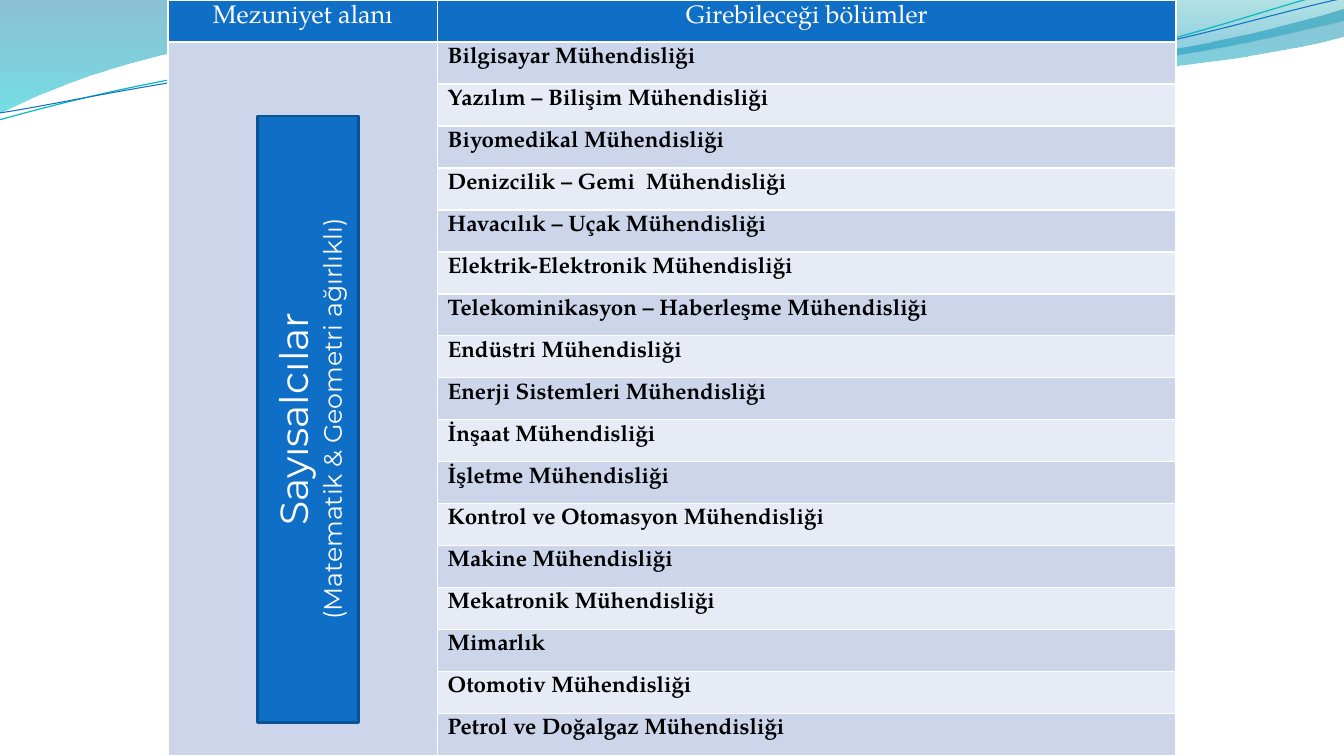
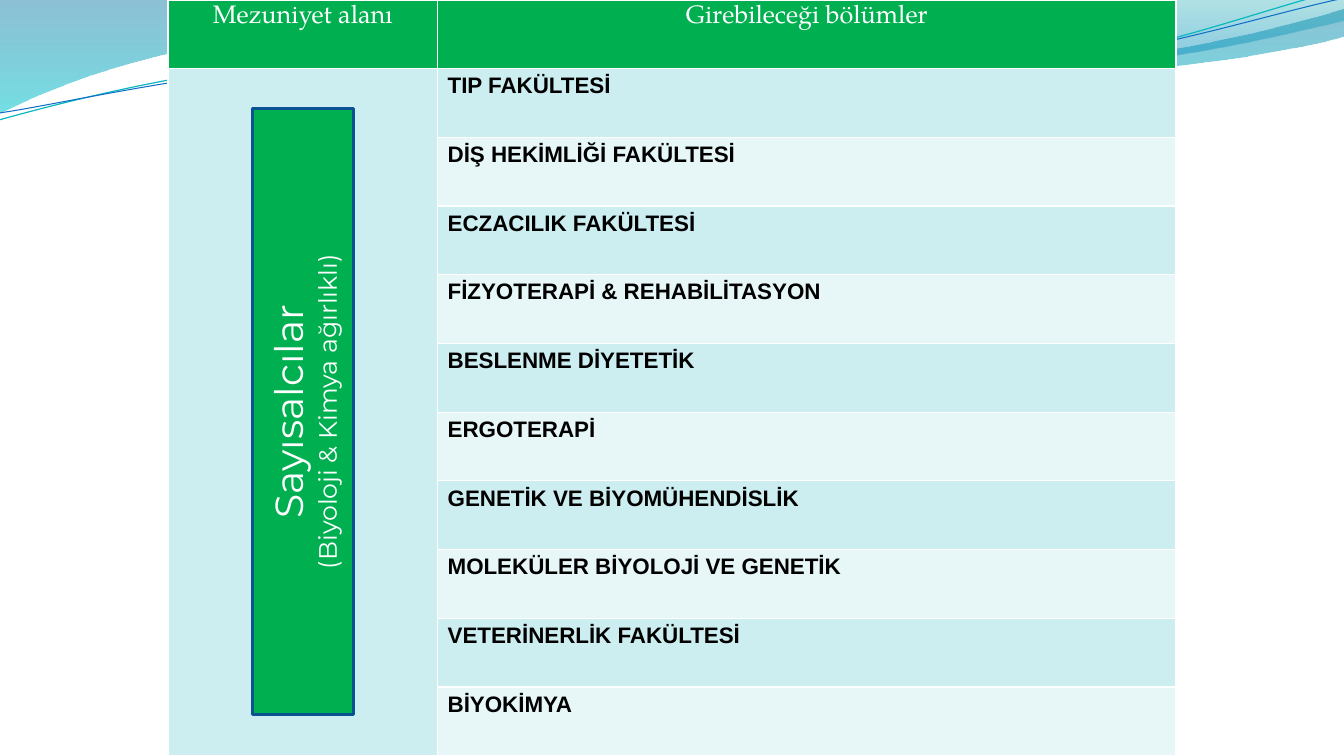
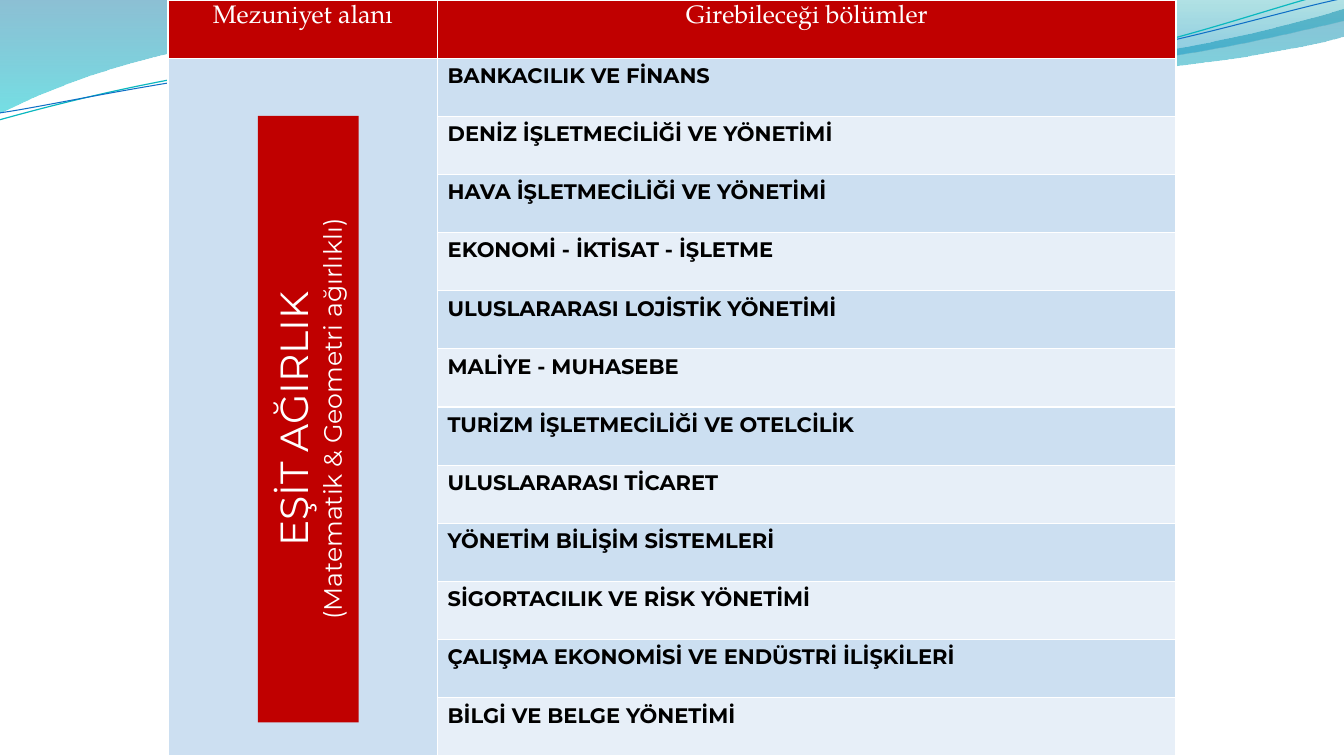
from dataclasses import dataclass

import lxml.etree
import pptx
import pptx.dml.color
import pptx.enum.shapes
import pptx.enum.text
import pptx.oxml.ns
import pptx.util

Pt = pptx.util.Pt
Inches = pptx.util.Inches
qn = pptx.oxml.ns.qn
PP_ALIGN = pptx.enum.text.PP_ALIGN

SLIDE_W, SLIDE_H = Inches(13.33), Inches(7.5)
GRID_COLS, GRID_ROWS = 160, 90
TABLE_COL, TABLE_COLS, LABEL_COLS = 20, 120, 32.1
BOX_COLS, BOX_ROWS = 72.2, 12

SERIF, SANS, PLAIN = "TeX Gyre Pagella", "Montserrat", "Arial"
WHITE, BLACK, BLUE, NAVY = "FFFFFF", "000000", "0F6FC6", "0B5292"
GREEN, RED = "00B050", "C00000"
HEADERS = ("Mezuniyet alanı", "Girebileceği bölümler")

Point = tuple[float, float]


@dataclass
class Stop:
    position: float
    color: str
    opacity: int


@dataclass
class Wave:
    """Outline in inches; a segment of one point is straight, of three a cubic curve."""
    start: Point
    segments: tuple[tuple[Point, ...], ...]
    stops: tuple[Stop, ...] = ()
    line: str = ""
    width: float = 0


@dataclass
class Field:
    title: str
    subtitle: str
    color: str
    bands: tuple[str, str]
    font: str
    size: int
    departments: tuple[str, ...]
    center: Point = (36.7, 49.9)
    outline: str = ""


WAVES = (
    Wave((0, 0), (
        ((5.87, -0.01),),
        ((6.34, 0.17), (8.85, 0.63), (10.11, 0.63)),
        ((11.38, 0.63), (12.78, 0.26), (13.33, 0.09)),
        ((13.35, 0.36),),
        ((13.11, 0.44), (11.6, 0.76), (9.94, 0.75)),
        ((8.29, 0.75), (5.09, 0.28), (3.43, 0.34)),
        ((1.72, 0.36), (0.61, 0.83), (-0.01, 1.13)),
    ), stops=(Stop(0, "0074A1", 45), Stop(1, "00C6CF", 55))),
    Wave((6.39, -0.01), (
        ((6.79, 0.11), (9.09, 0.62), (10.25, 0.65)),
        ((11.41, 0.69), (12.82, 0.32), (13.33, 0.21)),
        ((13.33, 0),),
    ), stops=(Stop(0, "00A1A9", 30), Stop(0.8, "008BBF", 45))),
    Wave((-0.01, 1.19), (
        ((0.64, 1.01), (2.11, 0.62), (3.69, 0.55)),
        ((5.27, 0.48), (7.9, 0.87), (9.5, 0.76)),
        ((11.1, 0.66), (12.52, 0.08), (13.31, -0.1)),
    ), line="0AB8BF", width=0.85),
    Wave((0, 1.12), (
        ((0.63, 1.03), (2.18, 0.66), (3.78, 0.59)),
        ((5.37, 0.53), (7.96, 0.82), (9.55, 0.72)),
        ((11.15, 0.62), (12.55, 0.14), (13.34, -0.02)),
    ), line=BLUE, width=0.75),
)

FIELDS = (
    Field("Sayısalcılar", "(Matematik & Geometri ağırlıklı)", BLUE,
          ("CCD5EA", "E7EBF5"), SERIF, 16, (
              "Bilgisayar Mühendisliği",
              "Yazılım – Bilişim Mühendisliği",
              "Biyomedikal Mühendisliği",
              "Denizcilik – Gemi  Mühendisliği",
              "Havacılık – Uçak Mühendisliği",
              "Elektrik-Elektronik Mühendisliği",
              "Telekominikasyon – Haberleşme Mühendisliği",
              "Endüstri Mühendisliği",
              "Enerji Sistemleri Mühendisliği",
              "İnşaat Mühendisliği",
              "İşletme Mühendisliği",
              "Kontrol ve Otomasyon Mühendisliği",
              "Makine Mühendisliği",
              "Mekatronik Mühendisliği",
              "Mimarlık",
              "Otomotiv Mühendisliği",
              "Petrol ve Doğalgaz Mühendisliği",
          ), outline=NAVY),
    Field("Sayısalcılar", "(Biyoloji & Kimya ağırlıklı)", GREEN,
          ("CCEEF1", "E7F7F8"), PLAIN, 16, (
              "TIP FAKÜLTESİ",
              "DİŞ HEKİMLİĞİ FAKÜLTESİ",
              "ECZACILIK FAKÜLTESİ",
              "FİZYOTERAPİ & REHABİLİTASYON",
              "BESLENME DİYETETİK",
              "ERGOTERAPİ",
              "GENETİK VE BİYOMÜHENDİSLİK",
              "MOLEKÜLER BİYOLOJİ VE GENETİK",
              "VETERİNERLİK FAKÜLTESİ",
              "BİYOKİMYA",
          ), center=(36.1, 49), outline=NAVY),
    Field("EŞİT AĞIRLIK", "(Matematik & Geometri ağırlıklı)", RED,
          ("CCDFF1", "E7EFF8"), SANS, 15, (
              "BANKACILIK VE FİNANS",
              "DENİZ İŞLETMECİLİĞİ VE YÖNETİMİ",
              "HAVA İŞLETMECİLİĞİ VE YÖNETİMİ",
              "EKONOMİ - İKTİSAT - İŞLETME",
              "ULUSLARARASI LOJİSTİK YÖNETİMİ",
              "MALİYE - MUHASEBE",
              "TURİZM İŞLETMECİLİĞİ VE OTELCİLİK",
              "ULUSLARARASI TİCARET",
              "YÖNETİM BİLİŞİM SİSTEMLERİ",
              "SİGORTACILIK VE RİSK YÖNETİMİ",
              "ÇALIŞMA EKONOMİSİ VE ENDÜSTRİ İLİŞKİLERİ",
              "BİLGİ VE BELGE YÖNETİMİ",
          )),
)


def col(n: float) -> int:
    return round(SLIDE_W * n / GRID_COLS)


def row(n: float) -> int:
    return round(SLIDE_H * n / GRID_ROWS)


def rgb(color: str) -> pptx.dml.color.RGBColor:
    return pptx.dml.color.RGBColor.from_string(color)


def fill_solid(fill, color: str) -> None:
    fill.solid()
    fill.fore_color.rgb = rgb(color)


def add_run(p, text: str, font: str, size: float, color: str, bold: bool = False) -> None:
    r = p.add_run()
    r.text = text
    r.font.name = font
    r.font.size = Pt(size)
    r.font.bold = bold
    r.font.color.rgb = rgb(color)


def bend_segments(sp, wave: Wave) -> None:
    """Join each three straight steps of a curved segment into one cubic curve."""
    steps = iter(list(sp.element.iter(qn("a:lnTo"))))
    for segment in wave.segments:
        group = [next(steps) for _ in segment]
        if len(group) == 3:
            curve = lxml.etree.Element(qn("a:cubicBezTo"))
            group[0].addprevious(curve)
            for step in group:
                curve.append(step[0])
                step.getparent().remove(step)


def add_wave(s, wave: Wave):
    builder = s.shapes.build_freeform(Inches(wave.start[0]), Inches(wave.start[1]))
    points = [(Inches(x), Inches(y)) for segment in wave.segments for x, y in segment]
    builder.add_line_segments(points, close=bool(wave.stops))
    sp = builder.convert_to_shape()
    bend_segments(sp, wave)
    sp.shadow.inherit = False
    if not wave.stops:
        sp.fill.background()
        sp.line.color.rgb = rgb(wave.line)
        sp.line.width = Pt(wave.width)
        return sp
    sp.line.fill.background()
    sp.fill.gradient()
    sp.fill.gradient_angle = 270
    for target, stop in zip(sp.fill.gradient_stops, wave.stops):
        target.position = stop.position
        target.color.rgb = rgb(stop.color)
    for clr, stop in zip(sp.element.iter(qn("a:srgbClr")), wave.stops):
        lxml.etree.SubElement(clr, qn("a:alpha"), val=str(stop.opacity * 1000))
    return sp


def move_waves_to_layout(s, layout) -> None:
    """Draw the waves once and hand them to the layout that all slides share."""
    for placeholder in list(layout.placeholders):
        layout.shapes.element.remove(placeholder.element)
    for wave in WAVES:
        layout.shapes.element.append(add_wave(s, wave).element)


def style_cell(cell, color: str) -> None:
    tc_pr = cell._tc.get_or_add_tcPr()
    for side in "LRTB":
        ln = lxml.etree.SubElement(tc_pr, qn(f"a:ln{side}"), w=str(Pt(1)))
        solid = lxml.etree.SubElement(ln, qn("a:solidFill"))
        lxml.etree.SubElement(solid, qn("a:srgbClr"), val=WHITE)
    fill_solid(cell.fill, color)


def add_departments(s, field: Field) -> None:
    count = len(field.departments) + 1
    table = s.shapes.add_table(count, 2, col(TABLE_COL), 0, col(TABLE_COLS), SLIDE_H).table
    table.columns[0].width = col(LABEL_COLS)
    table.columns[1].width = col(TABLE_COLS - LABEL_COLS)
    for table_row in table.rows:
        table_row.height = SLIDE_H // count
    for i, text in enumerate(HEADERS):
        cell = table.cell(0, i)
        style_cell(cell, field.color)
        p = cell.text_frame.paragraphs[0]
        p.alignment = PP_ALIGN.CENTER
        add_run(p, text, SERIF, 18, WHITE)
    for i, text in enumerate(field.departments):
        style_cell(table.cell(i + 1, 0), field.bands[0])
        cell = table.cell(i + 1, 1)
        style_cell(cell, field.bands[i % 2])
        add_run(cell.text_frame.paragraphs[0], text, field.font, field.size, BLACK, True)
    table.cell(1, 0).merge(table.cell(count - 1, 0))


def add_field_box(s, field: Field) -> None:
    x, y = field.center
    sp = s.shapes.add_shape(pptx.enum.shapes.MSO_SHAPE.RECTANGLE,
                            col(x - BOX_COLS / 2), row(y - BOX_ROWS / 2),
                            col(BOX_COLS), row(BOX_ROWS))
    sp.rotation = 270
    sp.shadow.inherit = False
    fill_solid(sp.fill, field.color)
    if field.outline:
        sp.line.color.rgb = rgb(field.outline)
        sp.line.width = Pt(2)
    else:
        sp.line.fill.background()
    tf = sp.text_frame
    tf.word_wrap = True
    tf.vertical_anchor = pptx.enum.text.MSO_ANCHOR.MIDDLE
    lines = ((tf.paragraphs[0], field.title, 28), (tf.add_paragraph(), field.subtitle, 18))
    for p, text, size in lines:
        p.alignment = PP_ALIGN.CENTER
        add_run(p, text, SANS, size, WHITE)


def main() -> None:
    prs = pptx.Presentation()
    prs.slide_width, prs.slide_height = SLIDE_W, SLIDE_H
    blank = prs.slide_layouts[6]
    slides = [prs.slides.add_slide(blank) for _ in FIELDS]
    move_waves_to_layout(slides[0], blank)
    for s, field in zip(slides, FIELDS):
        add_departments(s, field)
        add_field_box(s, field)
    prs.save("out.pptx")


if __name__ == "__main__":
    main()
